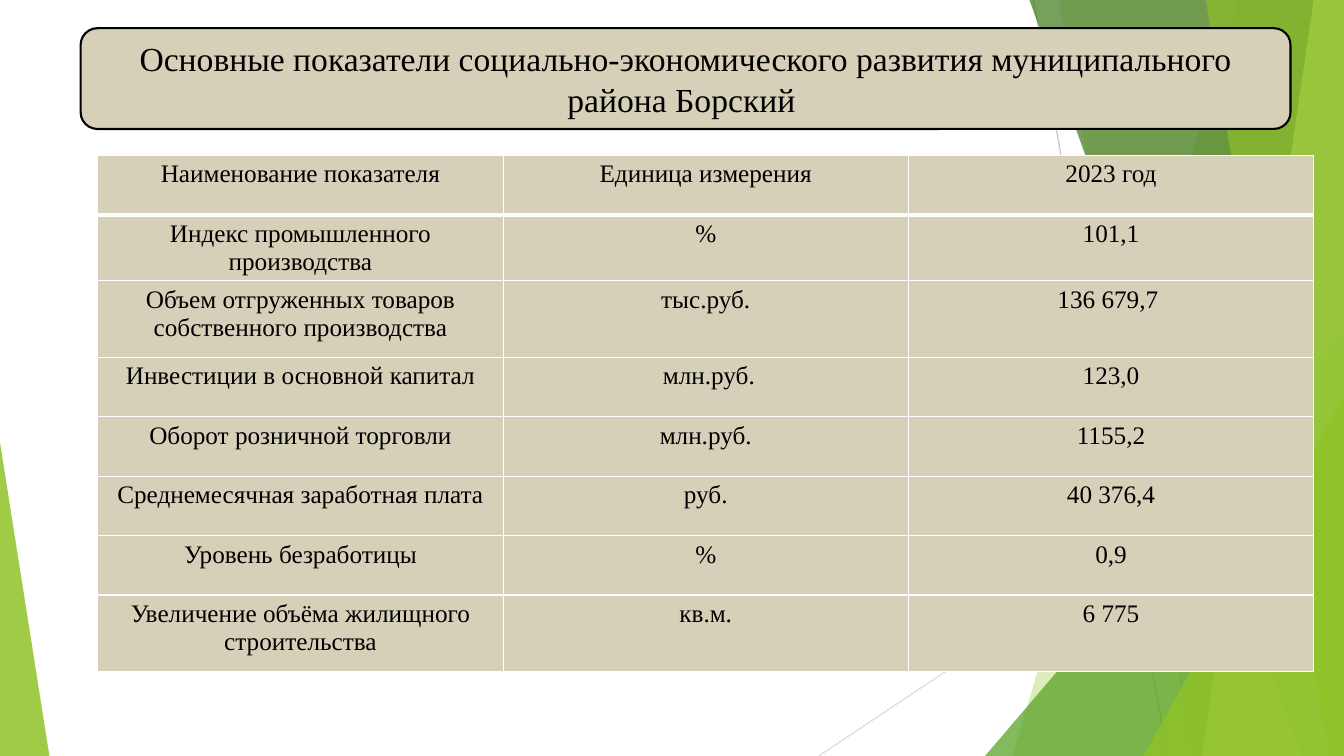
"""Builds a slide with a table of socio-economic indicators for a district."""
from lxml.etree import SubElement
from pptx import Presentation
from pptx.dml.color import RGBColor
from pptx.enum.shapes import MSO_CONNECTOR, MSO_SHAPE
from pptx.enum.text import MSO_ANCHOR, PP_ALIGN
from pptx.oxml.ns import qn
from pptx.util import Inches, Pt

COLORS = {
    "sand": "D6D0B8", "black": "000000", "white": "FFFFFF",
    "lime": "90C226", "green": "54A021", "forest": "3F7819", "pale": "C0E474",
    "gray": "BFBFBF", "light_gray": "D9D9D9",
}
FONT = "Times New Roman"
WIDTH, HEIGHT = 13.33, 7.5


def paint(shape, color, opacity):
    """Give a decorative shape a translucent fill and no outline."""
    shape.shadow.inherit = False
    shape.line.fill.background()
    shape.fill.solid()
    shape.fill.fore_color.rgb = RGBColor.from_string(COLORS[color])
    tint = shape.fill._xPr.find(qn("a:solidFill"))[0]
    SubElement(tint, qn("a:alpha"), val=str(opacity * 1000))


def style_text(para, size):
    """Centre a paragraph and set its font."""
    para.alignment = PP_ALIGN.CENTER
    para.font.name = FONT
    para.font.size = Pt(size)
    para.font.bold = False
    para.font.color.rgb = RGBColor.from_string(COLORS["black"])


deck = Presentation()
deck.slide_width, deck.slide_height = Inches(WIDTH), Inches(HEIGHT)
page = deck.slides.add_slide(deck.slide_layouts[6])

thin_lines = [(10.25, 0, 11.58, HEIGHT, "gray"), (WIDTH, 4.03, 8.12, HEIGHT, "light_gray")]
for x1, y1, x2, y2, color in thin_lines:
    line = page.shapes.add_connector(
        MSO_CONNECTOR.STRAIGHT, Inches(x1), Inches(y1), Inches(x2), Inches(y2))
    line.line.color.rgb = RGBColor.from_string(COLORS[color])
    line.line.width = Pt(0.75)
    SubElement(line._element.spPr, qn("a:effectLst"))

facets = [
    ("band", 12.28, 10.04, "lime", 30),
    ("band", 10.5, 11.83, "lime", 20),
    ("triangle", 9.77, 3.33, 3.56, 1, "green", 72),
    ("band", 10.21, 12.91, "forest", 70),
    ("band", 13.03, 11.92, "pale", 70),
    ("band", 11.96, 13.18, "lime", 65),
    ("triangle", 11.34, 3.93, 1.99, 1, "lime", 80),
    ("triangle", 0, 4.39, 0.49, 0, "lime", 85),
]
for kind, *place, color, opacity in facets:
    if kind == "band":
        top_x, bottom_x = place
        outline = page.shapes.build_freeform(Inches(top_x), 0)
        corners = [(WIDTH, 0), (WIDTH, HEIGHT), (bottom_x, HEIGHT)]
        outline.add_line_segments([(Inches(x), Inches(y)) for x, y in corners])
        facet = outline.convert_to_shape()
    else:
        left, top, width, peak = place
        facet = page.shapes.add_shape(
            MSO_SHAPE.ISOSCELES_TRIANGLE,
            Inches(left), Inches(top), Inches(width), Inches(HEIGHT - top))
        facet.adjustments[0] = peak
    paint(facet, color, opacity)

title_box = page.shapes.add_shape(
    MSO_SHAPE.ROUNDED_RECTANGLE, Inches(0.8), Inches(0.28), Inches(12), Inches(1))
title_box.shadow.inherit = False
title_box.fill.solid()
title_box.fill.fore_color.rgb = RGBColor.from_string(COLORS["sand"])
title_box.line.color.rgb = RGBColor.from_string(COLORS["black"])
title_box.line.width = Pt(1.5)
title_box.text_frame.word_wrap = True
title_box.text_frame.vertical_anchor = MSO_ANCHOR.MIDDLE
title = title_box.text_frame.paragraphs[0]
title.text = "Основные показатели социально-экономического развития муниципального района Борский "
style_text(title, 24)

indicators = [
    ("Наименование показателя", "Единица измерения", "2023 год"),
    ("Индекс промышленного производства", "%", "101,1"),
    ("Объем отгруженных товаров собственного производства", "тыс.руб.", "136 679,7 "),
    ("Инвестиции в основной капитал", " млн.руб.", "123,0"),
    ("Оборот розничной торговли", "млн.руб.", "1155,2"),
    ("Среднемесячная заработная плата", "руб.", "40 376,4"),
    ("Уровень безработицы", "%", "0,9"),
    ("Увеличение объёма жилищного строительства", "кв.м.", "6 775"),
]
row_heights = [0.59, 0.65, 0.76, 0.59, 0.59, 0.59, 0.59, 0.76]
table = page.shapes.add_table(
    len(indicators), 3, Inches(0.97), Inches(1.54),
    Inches(12.06), Inches(sum(row_heights))).table
for column in table.columns:
    column.width = Inches(4.02)

for row_index, (texts, height) in enumerate(zip(indicators, row_heights)):
    table.rows[row_index].height = Inches(height)
    for column_index, text in enumerate(texts):
        cell = table.cell(row_index, column_index)
        cell.text = text
        style_text(cell.text_frame.paragraphs[0], 18)
        properties = cell._tc.get_or_add_tcPr()
        for side in "LRTB":
            under_header = (row_index, side) in [(0, "B"), (1, "T")]
            border = SubElement(
                properties, qn(f"a:ln{side}"), w=str(Pt(3 if under_header else 1)))
            border_fill = SubElement(border, qn("a:solidFill"))
            SubElement(border_fill, qn("a:srgbClr"), val=COLORS["white"])
        cell.fill.solid()
        cell.fill.fore_color.rgb = RGBColor.from_string(COLORS["sand"])

deck.save("out.pptx")
